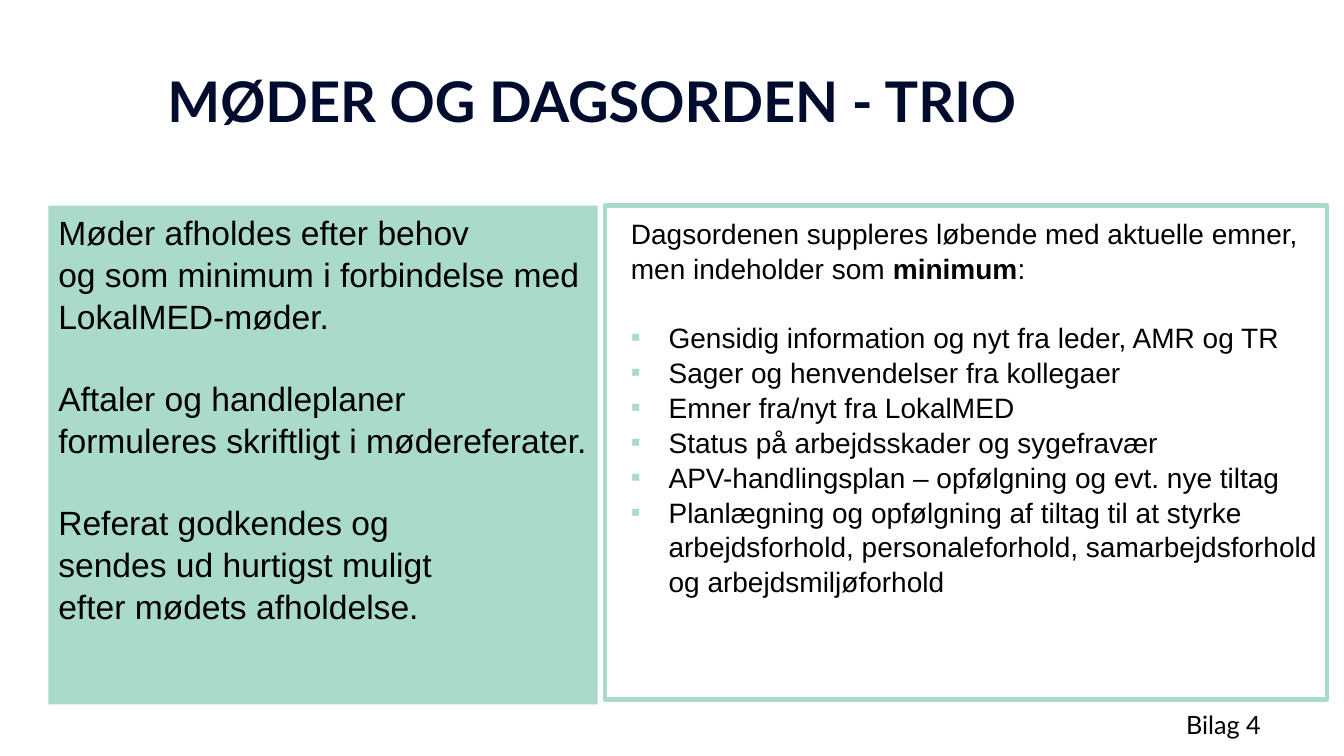
"""Build the slide on meetings and agenda for the TRIO group."""
from dataclasses import dataclass

from lxml import etree
from pptx import Presentation
from pptx.dml.color import RGBColor
from pptx.enum.shapes import MSO_SHAPE
from pptx.enum.text import MSO_ANCHOR, PP_ALIGN
from pptx.oxml.ns import qn
from pptx.util import Cm, Pt

RECTANGLE = MSO_SHAPE.RECTANGLE
TOP, BOTTOM = MSO_ANCHOR.TOP, MSO_ANCHOR.BOTTOM
LEFT = PP_ALIGN.LEFT
MINT, NAVY, BLACK = "A9DACB", "000C2E", "000000"
BODY_SPACING = 1.04
BULLET_INDENT = Cm(0.95)


@dataclass(frozen=True)
class Box:
    """Position and size in centimetres."""
    left: float
    top: float
    width: float
    height: float

    def lengths(self) -> tuple:
        """Return the four values as lengths."""
        return Cm(self.left), Cm(self.top), Cm(self.width), Cm(self.height)


@dataclass(frozen=True)
class Line:
    """A paragraph, given as pieces in which every second one is bold."""
    pieces: tuple[str, ...]
    gap_before: float = 0
    bullet: bool = False


MEETING_LINES = (
    Line(("Møder afholdes efter behov",)),
    Line(("og som minimum i forbindelse med LokalMED-møder.",)),
    Line(("Aftaler og handleplaner",), gap_before=28.8),
    Line(("formuleres skriftligt i mødereferater.",)),
    Line(("Referat godkendes og",), gap_before=28.8),
    Line(("sendes ud hurtigst muligt",)),
    Line(("efter mødets afholdelse.",)),
)
AGENDA_INTRO = Line(
    ("Dagsordenen suppleres løbende med aktuelle emner, men indeholder som ", "minimum", ":"))
AGENDA_ITEMS = (
    "Gensidig information og nyt fra leder, AMR og TR",
    "Sager og henvendelser fra kollegaer",
    "Emner fra/nyt fra LokalMED",
    "Status på arbejdsskader og sygefravær",
    "APV-handlingsplan – opfølgning og evt. nye tiltag",
    "Planlægning og opfølgning af tiltag til at styrke arbejdsforhold, "
    "personaleforhold, samarbejdsforhold og arbejdsmiljøforhold",
)


def rgb(value: str) -> RGBColor:
    """Turn a hex string into a colour."""
    return RGBColor.from_string(value)


def add_bullet(paragraph) -> None:
    """Give a paragraph a mint square bullet and a hanging indent."""
    properties = paragraph._p.get_or_add_pPr()
    properties.set("marL", str(BULLET_INDENT))
    properties.set("indent", str(-BULLET_INDENT))
    colour = etree.SubElement(properties, qn("a:buClr"))
    etree.SubElement(colour, qn("a:srgbClr"), val=MINT)
    etree.SubElement(properties, qn("a:buFont"), typeface="Arial")
    etree.SubElement(properties, qn("a:buChar"), char="▪")


def write(shape, lines, *, size: float, font: str = "Arial", colour: str = BLACK,
          bold: bool = False, spacing: float = 1.0, anchor=TOP, inset: bool = True) -> None:
    """Write lines into a shape with one shared format."""
    frame = shape.text_frame
    frame.word_wrap = True
    frame.vertical_anchor = anchor
    if not inset:
        frame.margin_left = frame.margin_right = frame.margin_top = frame.margin_bottom = 0
    for number, line in enumerate(lines):
        paragraph = frame.add_paragraph() if number else frame.paragraphs[0]
        paragraph.alignment = LEFT
        paragraph.line_spacing = spacing
        paragraph.space_before = Pt(line.gap_before)
        if line.bullet:
            add_bullet(paragraph)
        for position, piece in enumerate(line.pieces):
            run = paragraph.add_run()
            run.text = piece
            run.font.name = font
            run.font.size = Pt(size)
            run.font.bold = bold or position % 2 == 1
            run.font.color.rgb = rgb(colour)


def add_panel(slide, box: Box, *, fill: str | None = None, outline: str | None = None):
    """Add a rectangle with an optional fill and outline."""
    panel = slide.shapes.add_shape(RECTANGLE, *box.lengths())
    panel.shadow.inherit = False
    if fill:
        panel.fill.solid()
        panel.fill.fore_color.rgb = rgb(fill)
    else:
        panel.fill.background()
    if outline:
        panel.line.color.rgb = rgb(outline)
        panel.line.width = Pt(3)
    else:
        panel.line.fill.background()
    return panel


def main() -> None:
    """Build and save the slide."""
    deck = Presentation()
    deck.slide_width, deck.slide_height = Cm(33.87), Cm(19.05)
    slide = deck.slides.add_slide(deck.slide_layouts[6])

    title = slide.shapes.add_textbox(*Box(4.22, 1.93, 24.28, 1.45).lengths())
    write(title, [Line(("MØDER OG DAGSORDEN - TRIO",))], size=40, font="Lato",
          colour=NAVY, bold=True, spacing=0.83, anchor=BOTTOM, inset=False)

    appendix = slide.shapes.add_textbox(*Box(29.64, 17.75, 4.2, 1.02).lengths())
    write(appendix, [Line(("Bilag 4",))], size=18, font="Lato")

    meetings = add_panel(slide, Box(1.22, 5.18, 13.84, 12.57), fill=MINT)
    write(meetings, MEETING_LINES, size=24, spacing=BODY_SPACING)

    agenda = slide.shapes.add_textbox(*Box(15.65, 5.31, 18.21, 12.14).lengths())
    items = [Line((item,), gap_before=0 if number else 24, bullet=True)
             for number, item in enumerate(AGENDA_ITEMS)]
    write(agenda, [AGENDA_INTRO, *items], size=20, spacing=BODY_SPACING)
    add_panel(slide, Box(15.24, 5.18, 18.21, 12.45), outline=MINT)

    deck.save("out.pptx")


if __name__ == "__main__":
    main()
